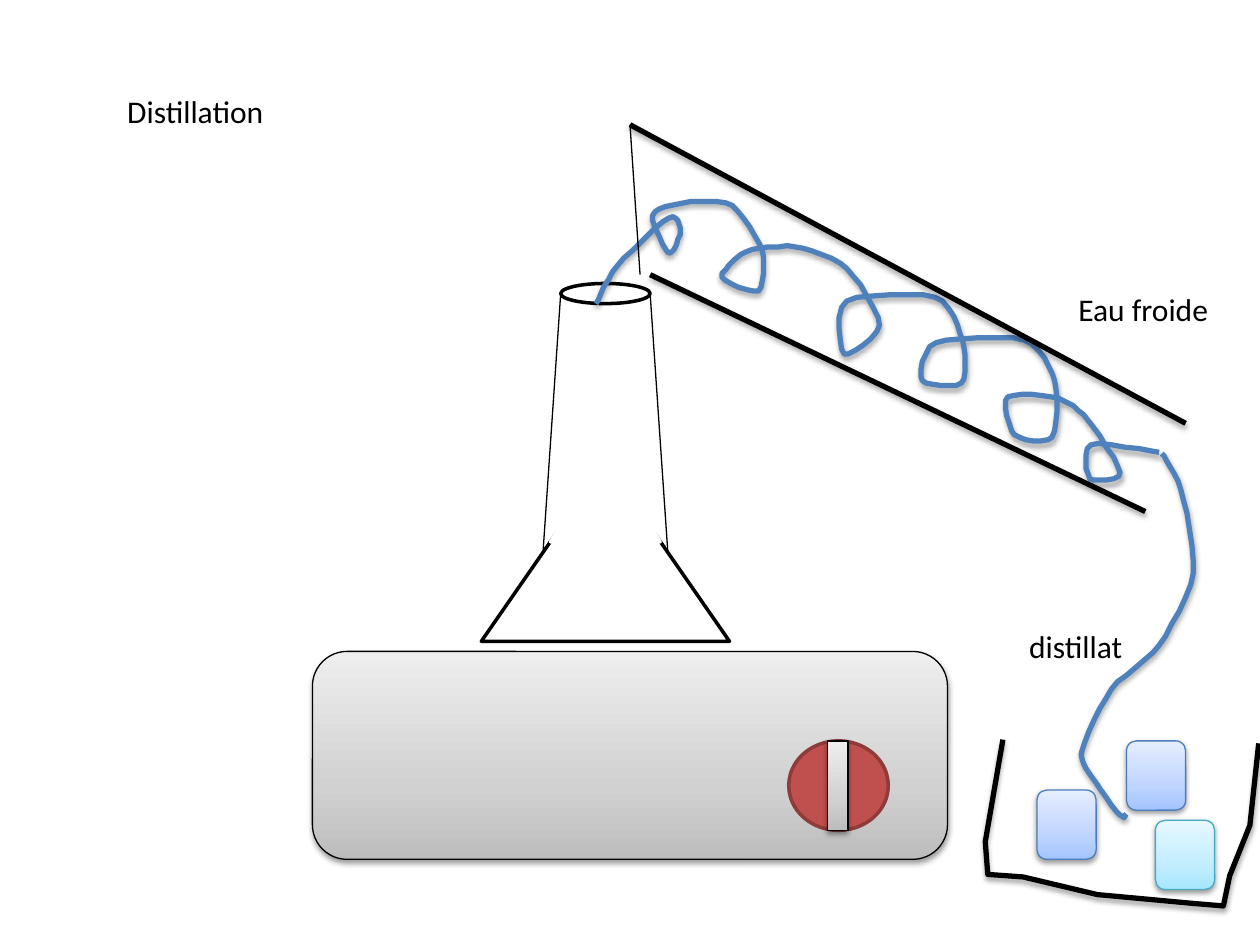
from copy import deepcopy
from dataclasses import dataclass
from typing import Optional, Union

from lxml import etree
from pptx import Presentation
from pptx.dml.color import RGBColor
from pptx.enum.shapes import MSO_CONNECTOR, MSO_SHAPE
from pptx.enum.text import MSO_ANCHOR, MSO_AUTO_SIZE, PP_ALIGN
from pptx.oxml.ns import qn
from pptx.util import Inches, Pt

STRAIGHT = MSO_CONNECTOR.STRAIGHT
OVAL, RECTANGLE = MSO_SHAPE.OVAL, MSO_SHAPE.RECTANGLE
ROUNDED, TRIANGLE = MSO_SHAPE.ROUNDED_RECTANGLE, MSO_SHAPE.ISOSCELES_TRIANGLE
LEFT, TOP = PP_ALIGN.LEFT, MSO_ANCHOR.TOP
NO_FIT, GROW = MSO_AUTO_SIZE.NONE, MSO_AUTO_SIZE.SHAPE_TO_FIT_TEXT

# The slide is a grid of 1000 columns by 750 rows
COLUMNS = 1000
SLIDE_WIDTH, SLIDE_HEIGHT = Inches(10), Inches(7.5)
CELL = SLIDE_WIDTH // COLUMNS
CURVE_STEPS = 6
CURVE_TENSION = 0.4


@dataclass(frozen=True)
class Theme:
    font: str = "Calibri"
    size: int = 18
    black: str = "000000"
    white: str = "FFFFFF"
    tube: str = "4F81BD"
    knob: str = "C0504D"
    knob_edge: str = "8E3B39"
    ice_edge: str = "4B7EBC"
    pale_ice_edge: str = "46AAC5"
    metal: tuple = ("BDBDBD", "D1D1D1", "EEEEEE")
    ice: tuple = ("A4C4FF", "BFD4FF", "E6EEFF")
    pale_ice: tuple = ("A7E6FF", "C1EDFF", "E7F8FF")
    gradient_positions: tuple = (0, 0.35, 1)
    thin: float = 0.75
    medium: float = 2
    thick: float = 3


THEME = Theme()


@dataclass(frozen=True)
class Shadow:
    opacity: int
    distance: float
    blur: float = 3.1


BODY_SHADOW = Shadow(38, 1.6)
LINE_SHADOW = Shadow(35, 1.8)


@dataclass(frozen=True)
class Body:
    """A preset shape; a tuple as fill means a vertical gradient."""
    kind: int
    box: tuple
    fill: Union[str, tuple]
    edge: str = THEME.black
    weight: float = THEME.thin
    shadow: Optional[Shadow] = None


@dataclass(frozen=True)
class Stroke:
    """An open line; two points make a connector, more make a freeform."""
    points: tuple
    color: str = THEME.black
    weight: float = THEME.thick
    shadow: Optional[Shadow] = LINE_SHADOW
    smooth: bool = False


@dataclass(frozen=True)
class Label:
    text: str
    box: tuple


def ice_cube(column: int, row: int, fill: tuple = THEME.ice, edge: str = THEME.ice_edge) -> Body:
    return Body(ROUNDED, (column, row, 47, 55), fill, edge, shadow=BODY_SHADOW)


def thin_line(*points: tuple) -> Stroke:
    return Stroke(points, weight=THEME.thin, shadow=None)


# Curves, as the grid points they pass through
COIL = (
    (473, 241), (490, 211), (531, 173), (540, 183), (531, 201), (518, 171), (543, 161),
    (581, 163), (605, 199), (602, 231), (573, 220), (592, 200), (631, 196), (672, 213),
    (698, 258), (670, 281), (672, 239), (742, 236), (764, 270), (763, 304), (732, 302),
    (743, 272), (813, 270), (837, 302), (835, 347), (805, 345), (800, 315), (840, 316),
    (863, 333), (889, 375), (865, 380), (866, 353), (920, 359),
)
OUTLET = (
    (922, 360), (937, 388), (947, 455), (920, 512), (882, 547), (859, 595), (866, 616),
    (889, 647), (894, 646),
)
BASIN = (
    (796, 587), (782, 668), (784, 694), (812, 696), (871, 710), (947, 717), (971, 719),
    (976, 695), (992, 655), (999, 590),
)

# Everything on the slide, from back to front
APPARATUS = (
    # Hot plate and its knob
    Body(ROUNDED, (248, 517, 504, 165), THEME.metal, shadow=BODY_SHADOW),
    Body(OVAL, (626, 588, 79, 71), THEME.knob, THEME.knob_edge, THEME.medium),
    Body(RECTANGLE, (657, 588, 16, 71), THEME.metal, shadow=BODY_SHADOW),
    # Flask, with a white triangle opening its neck
    Body(TRIANGLE, (382, 367, 197, 142), THEME.white, weight=THEME.medium),
    Body(OVAL, (445, 225, 71, 16), THEME.white, weight=THEME.medium),
    thin_line((445, 233), (431, 438)),
    thin_line((516, 233), (530, 438)),
    Body(TRIANGLE, (437, 359, 87, 71), THEME.white, THEME.white, THEME.medium),
    # Condenser
    Stroke(COIL, THEME.tube, smooth=True),
    Stroke(((516, 218), (909, 406))),
    Stroke(((500, 99), (941, 336))),
    thin_line((500, 99), (508, 218)),
    # Outlet and ice basin
    Stroke(OUTLET, THEME.tube, smooth=True),
    Stroke(BASIN),
    ice_cube(823, 627),
    ice_cube(917, 651, THEME.pale_ice, THEME.pale_ice_edge),
    ice_cube(894, 588),
)
TITLE = Label("Distillation", (91, 68, 130, 131))
LABELS = (
    Label("Eau froide", (846, 225, 124, 40)),
    Label("distillat", (807, 493, 95, 40)),
)


def cells(values: tuple) -> list:
    return [value * CELL for value in values]


def smooth_path(points: tuple) -> list:
    """Round the path with a cardinal spline through all its points."""
    knots = [complex(*point) for point in (points[0], *points, points[-1])]
    path = [points[0]]
    for before, start, end, after in zip(knots, knots[1:], knots[2:], knots[3:]):
        leave, arrive = CURVE_TENSION * (end - before), CURVE_TENSION * (after - start)
        for step in range(1, CURVE_STEPS + 1):
            t = step / CURVE_STEPS
            blend = t * t * (3 - 2 * t)
            spot = (start + (end - start) * blend
                    + leave * t * (1 - t) ** 2 - arrive * t * t * (1 - t))
            path.append((spot.real, spot.imag))
    return path


def apply_format(target, values: dict) -> None:
    for name, value in values.items():
        setattr(target, name, value)


def set_line(shape, color: str, weight: float) -> None:
    shape.line.color.rgb = RGBColor.from_string(color)
    shape.line.width = Pt(weight)


def set_shadow(shape, shadow: Optional[Shadow]) -> None:
    """Write the effect list, which stays empty without a shadow."""
    effects = etree.SubElement(shape._element.spPr, qn("a:effectLst"))
    if shadow:
        outer = etree.SubElement(effects, qn("a:outerShdw"), blurRad=str(Pt(shadow.blur)),
                                 dist=str(Pt(shadow.distance)), dir="5400000", rotWithShape="0")
        color = etree.SubElement(outer, qn("a:srgbClr"), val=THEME.black)
        etree.SubElement(color, qn("a:alpha"), val=str(shadow.opacity * 1000))


def set_gradient(shape, colors: tuple) -> None:
    shape.fill.gradient()
    shape.fill.gradient_angle = 90
    stop_list = shape._element.spPr.find(".//" + qn("a:gsLst"))
    stop_list.append(deepcopy(stop_list[-1]))
    for stop, color, position in zip(shape.fill.gradient_stops, colors, THEME.gradient_positions):
        stop.color.rgb = RGBColor.from_string(color)
        stop.position = position


def draw_body(slide, body: Body) -> None:
    shape = slide.shapes.add_shape(body.kind, *cells(body.box))
    if isinstance(body.fill, tuple):
        set_gradient(shape, body.fill)
    else:
        shape.fill.solid()
        shape.fill.fore_color.rgb = RGBColor.from_string(body.fill)
    set_line(shape, body.edge, body.weight)
    set_shadow(shape, body.shadow)


def draw_stroke(slide, stroke: Stroke) -> None:
    start, *others = smooth_path(stroke.points) if stroke.smooth else stroke.points
    if len(others) == 1:
        shape = slide.shapes.add_connector(STRAIGHT, *cells(start + others[0]))
    else:
        builder = slide.shapes.build_freeform(*start, scale=CELL)
        builder.add_line_segments(others, close=False)
        shape = builder.convert_to_shape()
        shape.fill.background()
    set_line(shape, stroke.color, stroke.weight)
    set_shadow(shape, stroke.shadow)


def write_label(shape, label: Label, auto_size) -> None:
    apply_format(shape, dict(zip(("left", "top", "width", "height"), cells(label.box))))
    frame = shape.text_frame
    frame.text = label.text
    apply_format(frame, {"word_wrap": False, "auto_size": auto_size, "vertical_anchor": TOP})
    paragraph = frame.paragraphs[0]
    paragraph.alignment = LEFT
    font = paragraph.runs[0].font
    apply_format(font, {"name": THEME.font, "size": Pt(THEME.size)})
    font.color.rgb = RGBColor.from_string(THEME.black)


def main() -> None:
    presentation = Presentation()
    apply_format(presentation, {"slide_width": SLIDE_WIDTH, "slide_height": SLIDE_HEIGHT})
    slide = presentation.slides.add_slide(presentation.slide_layouts.get_by_name("Title Only"))
    write_label(slide.shapes.title, TITLE, NO_FIT)
    for part in APPARATUS:
        draw = draw_body if isinstance(part, Body) else draw_stroke
        draw(slide, part)
    for label in LABELS:
        write_label(slide.shapes.add_textbox(*cells(label.box)), label, GROW)
    presentation.save("out.pptx")


if __name__ == "__main__":
    main()
